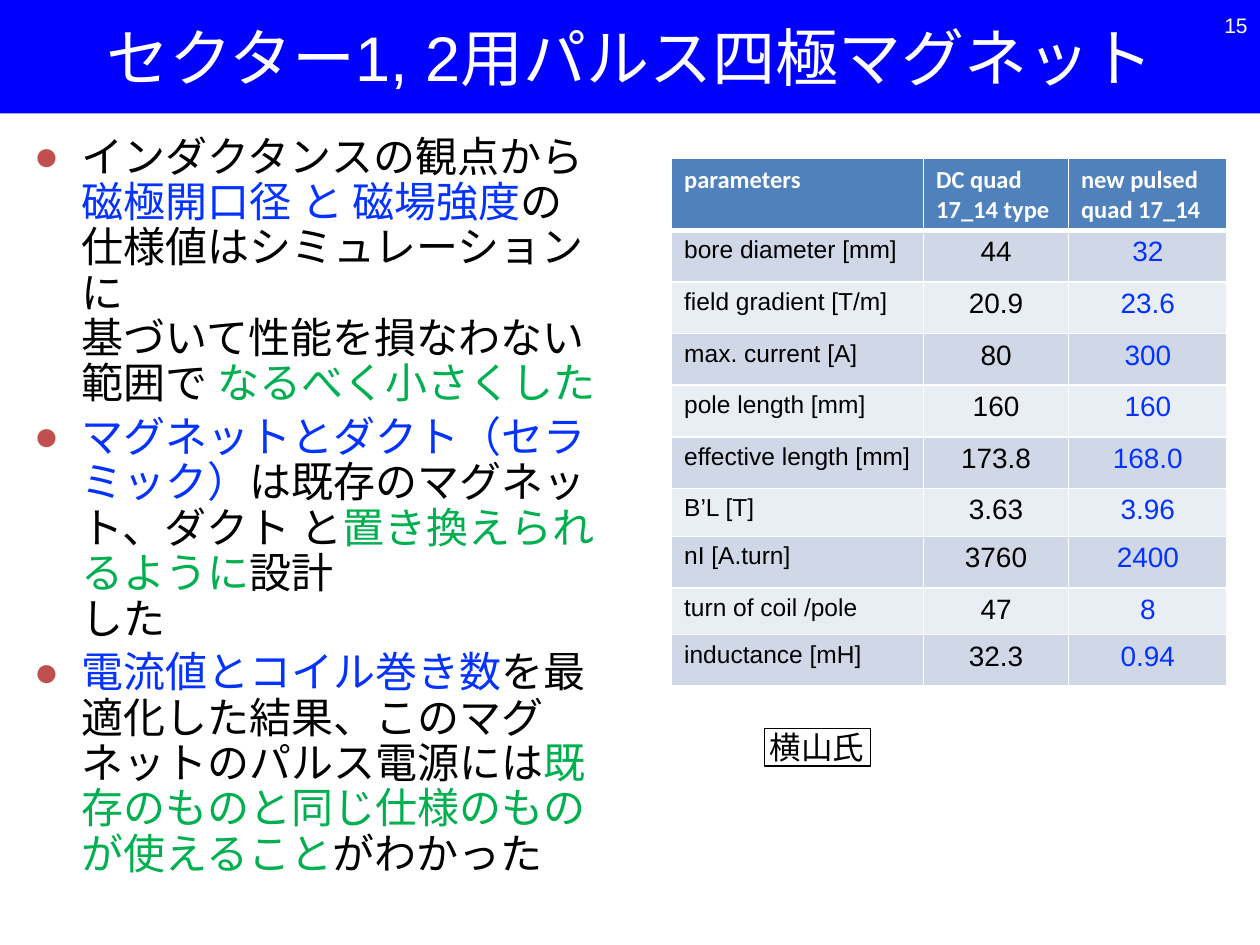
from dataclasses import dataclass
from typing import Optional

from lxml import etree
from pptx import Presentation
from pptx import util as u
from pptx.dml.color import RGBColor
from pptx.enum import lang, shapes, text
from pptx.oxml import ns

WHITE, BLACK = "FFFFFF", "000000"
BLUE, GREEN = "0432FF", "00B050"
TITLE_BLUE, HEADER_BLUE, BULLET_RED = "0000FF", "4F81BD", "C0504D"
BAND_FILLS = ("D0D8E8", "E9EDF4")
LEFT, CENTER, RIGHT = text.PP_ALIGN.LEFT, text.PP_ALIGN.CENTER, text.PP_ALIGN.RIGHT


@dataclass(frozen=True)
class Style:
    size: float
    color: str = BLACK
    font: str = "Arial"
    bold: bool = False
    japanese: bool = False


@dataclass(frozen=True)
class Parameter:
    name: str
    dc_quad: str
    pulsed_quad: str
    height: float = 0.41


BULLETS = (
    (
        ("インダクタンスの観点から\n", BLACK),
        ("磁極開口径 と 磁場強度", BLUE),
        ("の\n仕様値はシミュレーションに\n基づいて性能を損なわない範囲で ", BLACK),
        ("なるべく小さくした", GREEN),
    ),
    (
        ("マグネットとダクト（セラミック）", BLUE),
        ("は既存のマグネット、ダクト と", BLACK),
        ("置き換えられるように", GREEN),
        ("設計\nした", BLACK),
    ),
    (
        ("電流値とコイル巻き数", BLUE),
        ("を最適化した結果、このマグネットのパルス電源には", BLACK),
        ("既存のものと同じ仕様のものが使えること", GREEN),
        ("がわかった", BLACK),
    ),
)
PARAMETERS = (
    Parameter("parameters", "DC quad\n17_14 type", "new pulsed quad 17_14"),
    Parameter("bore diameter [mm]", "44", "32"),
    Parameter("field gradient [T/m]", "20.9", "23.6"),
    Parameter("max. current [A]", "80", "300"),
    Parameter("pole length [mm]", "160", "160"),
    Parameter("effective length [mm]", "173.8", "168.0"),
    Parameter("B’L [T]", "3.63", "3.96", 0.38),
    Parameter("nI [A.turn]", "3760", "2400"),
    Parameter("turn of coil /pole", "47", "8", 0.37),
    Parameter("inductance [mH]", "32.3", "0.94"),
)
COLUMN_WIDTHS = (2, 1.15, 1.26)
HEADER_STYLE = Style(14, WHITE, "Calibri", bold=True)
COLUMN_STYLES = (Style(14), Style(16), Style(16, BLUE))
COLUMN_ALIGNMENTS = (LEFT, CENTER, CENTER)


def rgb(color: str) -> RGBColor:
    return RGBColor.from_string(color)


def box(left: float, top: float, width: float, height: float) -> tuple:
    return tuple(u.Inches(value) for value in (left, top, width, height))


def add_text(paragraph, content: str, style: Style) -> None:
    """Append runs, with a line break at each newline."""
    for index, line in enumerate(content.split("\n")):
        if index:
            paragraph.add_line_break()
        if not line:
            continue
        run = paragraph.add_run()
        run.text = line
        font = run.font
        font.name, font.size, font.bold = style.font, u.Pt(style.size), style.bold
        font.color.rgb = rgb(style.color)
        if style.japanese:
            font.language_id = lang.MSO_LANGUAGE_ID.JAPANESE


def add_rectangle(slide, place: tuple, fill: Optional[str], line: Optional[str]):
    shape = slide.shapes.add_shape(shapes.MSO_SHAPE.RECTANGLE, *place)
    shape.shadow.inherit = False
    if fill:
        shape.fill.solid()
        shape.fill.fore_color.rgb = rgb(fill)
    else:
        shape.fill.background()
    if line:
        shape.line.color.rgb = rgb(line)
        shape.line.width = u.Pt(0.75)
    else:
        shape.line.fill.background()
    return shape


def add_title(slide) -> None:
    shape = add_rectangle(slide, box(0, 0, 10, 0.9), TITLE_BLUE, None)
    shape.text_frame.vertical_anchor = text.MSO_ANCHOR.MIDDLE
    paragraph = shape.text_frame.paragraphs[0]
    paragraph.alignment = CENTER
    add_text(paragraph, "セクター1, 2用パルス四極マグネット", Style(36, WHITE, japanese=True))


def set_bullet(paragraph, indent: float) -> None:
    properties = paragraph._p.get_or_add_pPr()
    properties.set("marL", str(u.Inches(indent)))
    properties.set("indent", str(-u.Inches(indent)))
    color = etree.SubElement(properties, ns.qn("a:buClr"))
    etree.SubElement(color, ns.qn("a:srgbClr"), val=BULLET_RED)
    etree.SubElement(properties, ns.qn("a:buFont"), typeface="Arial")
    etree.SubElement(properties, ns.qn("a:buChar"), char="●")


def add_bullets(slide) -> None:
    frame = slide.shapes.add_textbox(*box(0.17, 1.03, 4.83, 6.47)).text_frame
    frame.word_wrap = True
    for index, parts in enumerate(BULLETS):
        paragraph = frame.add_paragraph() if index else frame.paragraphs[0]
        set_bullet(paragraph, 0.38)
        paragraph.line_spacing = 0.9
        if index:
            paragraph.space_before = u.Pt(4.8)
        for content, color in parts:
            add_text(paragraph, content, Style(24, color, japanese=True))


def add_slide_number(slide) -> None:
    frame = slide.shapes.add_textbox(*box(9.49, 0, 0.51, 0.4)).text_frame
    frame.word_wrap = True
    frame.vertical_anchor = text.MSO_ANCHOR.MIDDLE
    frame.paragraphs[0].alignment = RIGHT
    add_text(frame.paragraphs[0], "15", Style(12, WHITE))


def set_borders(cell, widths: dict) -> None:
    """Draw white cell borders; widths are in points by side letter."""
    properties = cell._tc.get_or_add_tcPr()
    for index, (side, width) in enumerate(widths.items()):
        line = etree.Element(ns.qn(f"a:ln{side}"), w=str(u.Pt(width)))
        fill = etree.SubElement(line, ns.qn("a:solidFill"))
        etree.SubElement(fill, ns.qn("a:srgbClr"), val=WHITE)
        properties.insert(index, line)


def add_parameter_table(slide) -> None:
    place = box(5.33, 1.26, sum(COLUMN_WIDTHS), sum(row.height for row in PARAMETERS))
    table = slide.shapes.add_table(len(PARAMETERS), len(COLUMN_WIDTHS), *place).table
    for column, width in zip(table.columns, COLUMN_WIDTHS):
        column.width = u.Inches(width)
    for row, parameter in enumerate(PARAMETERS):
        table.rows[row].height = u.Inches(parameter.height)
        values = (parameter.name, parameter.dc_quad, parameter.pulsed_quad)
        for column, value in enumerate(values):
            cell = table.cell(row, column)
            cell.fill.solid()
            cell.fill.fore_color.rgb = rgb(BAND_FILLS[(row - 1) % 2] if row else HEADER_BLUE)
            set_borders(cell, {"L": 1, "R": 1, "T": 3 if row == 1 else 1, "B": 1 if row else 3})
            paragraph = cell.text_frame.paragraphs[0]
            paragraph.alignment = COLUMN_ALIGNMENTS[column] if row else LEFT
            add_text(paragraph, value, COLUMN_STYLES[column] if row else HEADER_STYLE)


def add_name_label(slide) -> None:
    frame = add_rectangle(slide, box(6.07, 5.78, 0.84, 0.3), None, BLACK).text_frame
    frame.margin_left = frame.margin_right = u.Inches(0.04)
    frame.margin_top = frame.margin_bottom = 0
    frame.word_wrap = False
    frame.auto_size = text.MSO_AUTO_SIZE.SHAPE_TO_FIT_TEXT
    frame.paragraphs[0].alignment = LEFT
    add_text(frame.paragraphs[0], "横山氏", Style(18, font="Calibri", japanese=True))


def main() -> None:
    presentation = Presentation()
    presentation.slide_width, presentation.slide_height = u.Inches(10), u.Inches(7.5)
    slide = presentation.slides.add_slide(presentation.slide_layouts[6])
    add_title(slide)
    add_bullets(slide)
    add_slide_number(slide)
    add_parameter_table(slide)
    add_name_label(slide)
    presentation.save("out.pptx")


if __name__ == "__main__":
    main()
